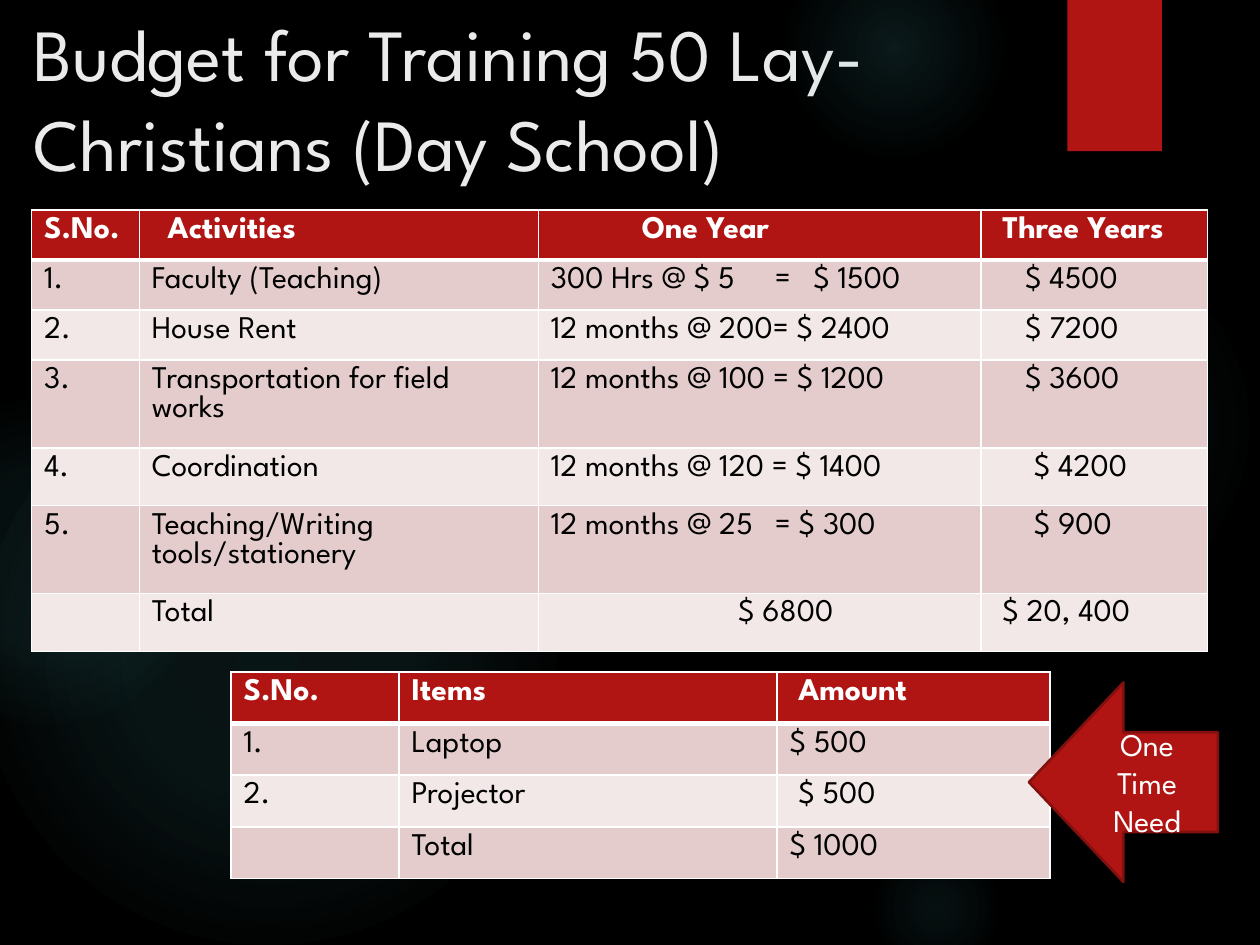
"""Build the day school training budget slide."""
from lxml.etree import SubElement
from pptx import Presentation
from pptx.dml.color import RGBColor
from pptx.enum.shapes import MSO_SHAPE
from pptx.enum.text import MSO_ANCHOR, PP_ALIGN
from pptx.oxml import parse_xml
from pptx.oxml.ns import nsdecls, qn
from pptx.util import Pt

FONT = "League Spartan"
HUES = {"back": "000000", "red": "B01513", "edge": "82100E", "glow": "50B9C1",
        "title": "EBEBEB", "white": "FFFFFF", "text": "000000",
        "odd": "E4CCCC", "even": "F2E8E7"}


def write(para, text, size, hue, pitch, bold=False):
    """Add one styled run and fix the line pitch."""
    para.line_spacing = Pt(pitch)
    run = para.add_run()
    run.text = text
    run.font.name = FONT
    run.font.size = Pt(size)
    run.font.bold = bold
    run.font.color.rgb = RGBColor.from_string(HUES[hue])


def grid(slide, box, cols, rows, data, dents):
    """Add a banded table with white rules and indented cells."""
    table = slide.shapes.add_table(len(rows), len(cols), *map(Pt, box)).table
    for col, width in zip(table.columns, cols):
        col.width = Pt(width)
    for r, (height, line) in enumerate(zip(rows, data)):
        table.rows[r].height = Pt(height)
        band = "red" if r == 0 else "odd" if r % 2 else "even"
        for c, text in enumerate(line):
            cell = table.cell(r, c)
            cell.margin_left = Pt(7.2 + dents.get((r, c), 0))
            props = cell._tc.get_or_add_tcPr()
            for side in ("lnL", "lnR", "lnT", "lnB"):
                thick = (r == 0 and side == "lnB") or (r == 1 and side == "lnT")
                rule = SubElement(props, qn("a:" + side), w=str(Pt(3 if thick else 1)))
                fill = SubElement(rule, qn("a:solidFill"))
                SubElement(fill, qn("a:srgbClr"), val=HUES["white"])
            cell.fill.solid()
            cell.fill.fore_color.rgb = RGBColor.from_string(HUES[band])
            para = cell.text_frame.paragraphs[0]
            if text:
                write(para, text, 18, "text" if r else "white", 16.6, r == 0)
            if "\t" in text:
                tabs = SubElement(para._p.get_or_add_pPr(), qn("a:tabLst"))
                for stop in (128, 150):
                    SubElement(tabs, qn("a:tab"), pos=str(Pt(stop)), algn="l")


deck = Presentation()
deck.slide_width, deck.slide_height = Pt(720), Pt(540)
slide = deck.slides.add_slide(deck.slide_layouts[5])
slide.background.fill.solid()
slide.background.fill.fore_color.rgb = RGBColor.from_string(HUES["back"])

glows = [
    (496, 132, 222, (7, 6), 69),
    (448, -36, 126, (14, 7), 73),
    (496, 480, 78, (9, 5), 66),
    (-12, 210, 330, (11, 10), 75),
    (-66, 228, 186, (8, 8), 72),
]
for left, top, size, (core, mid), end in glows:
    glow = slide.shapes.add_shape(MSO_SHAPE.OVAL, Pt(left), Pt(top), Pt(size), Pt(size))
    glow.shadow.inherit = False
    glow.line.fill.background()
    stops = "".join(
        f'<a:gs pos="{pos * 1000}"><a:srgbClr val="{HUES["glow"]}">'
        f'<a:alpha val="{alpha * 1000}"/></a:srgbClr></a:gs>'
        for pos, alpha in ((0, core), (36, mid), (end, 0)))
    glow._element.spPr.find(qn("a:prstGeom")).addnext(parse_xml(
        f'<a:gradFill {nsdecls("a")}><a:gsLst>{stops}</a:gsLst><a:path path="circle">'
        '<a:fillToRect l="50000" t="50000" r="50000" b="50000"/></a:path></a:gradFill>'))

flag = slide.shapes.add_shape(MSO_SHAPE.RECTANGLE, Pt(610), Pt(0), Pt(54), Pt(86.4))
flag.shadow.inherit = False
flag.fill.solid()
flag.fill.fore_color.rgb = RGBColor.from_string(HUES["red"])
flag.line.fill.background()

title = slide.shapes.title
title.left, title.top, title.width, title.height = Pt(12), Pt(0), Pt(594), Pt(146)
title.text_frame.vertical_anchor = MSO_ANCHOR.TOP
title.text_frame.word_wrap = True
head = title.text_frame.paragraphs[0]
head.alignment = PP_ALIGN.LEFT
write(head, "Budget for Training 50 Lay-Christians (Day School)", 42, "title", 51.4)

costs = [
    ("S.No.", "Activities", "One Year", "Three Years"),
    ("1.", "Faculty (Teaching)", "300 Hrs @ $ 5\t=\t$ 1500", "$ 4500"),
    ("2.", "House Rent", "12 months @ 200= $ 2400", "$ 7200"),
    ("3.", "Transportation for field works", "12 months @ 100 = $ 1200", "$ 3600"),
    ("4.", "Coordination", "12 months @ 120 = $ 1400", "$ 4200"),
    ("5.", "Teaching/Writing tools/stationery", "12 months @ 25\t= $ 300", "$ 900"),
    ("", "Total", "$ 6800", "$ 20, 400"),
]
dents = {(0, 1): 9, (0, 2): 52, (0, 3): 5, (1, 3): 18, (2, 3): 18, (3, 3): 18,
         (4, 3): 23, (5, 3): 23, (6, 2): 107, (6, 3): 5}
grid(slide, (18, 120, 672, 252.4), (61.6, 228, 253, 129.4),
     (28.6, 28.6, 28.6, 50.2, 33.1, 50.2, 33.1), costs, dents)

items = [
    ("S.No.", "Items", "Amount"),
    ("1.", "Laptop", "$ 500"),
    ("2.", "Projector", "$ 500"),
    ("", "Total", "$ 1000"),
]
grid(slide, (132, 384, 468, 118), (96, 216, 156), [29.5] * 4, items,
     {(0, 2): 5, (2, 2): 5})

arrow = slide.shapes.add_shape(MSO_SHAPE.LEFT_ARROW, Pt(588), Pt(390), Pt(108), Pt(114))
arrow.shadow.inherit = False
arrow.fill.solid()
arrow.fill.fore_color.rgb = RGBColor.from_string(HUES["red"])
arrow.line.color.rgb = RGBColor.from_string(HUES["edge"])
arrow.line.width = Pt(1.5)
arrow.text_frame.word_wrap = True
arrow.text_frame.vertical_anchor = MSO_ANCHOR.MIDDLE
note = arrow.text_frame.paragraphs[0]
note.alignment = PP_ALIGN.CENTER
write(note, "One Time Need", 18, "white", 21.7)

deck.save("out.pptx")
